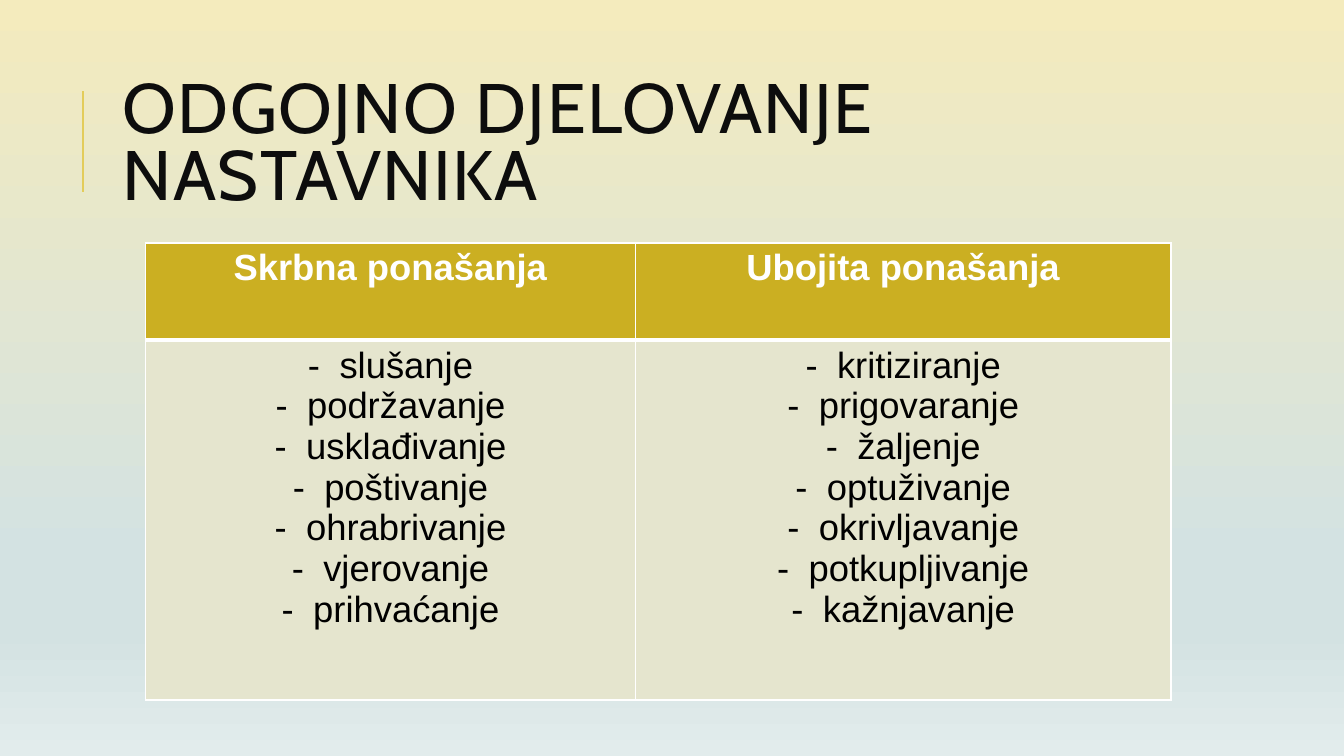
from dataclasses import dataclass

from lxml import etree
from pptx import Presentation
from pptx.dml.color import RGBColor
from pptx.enum.shapes import MSO_CONNECTOR
from pptx.enum.text import MSO_ANCHOR, PP_ALIGN
from pptx.oxml.ns import qn
from pptx.util import Pt

STRAIGHT = MSO_CONNECTOR.STRAIGHT
MIDDLE = MSO_ANCHOR.MIDDLE
LEFT, CENTER = PP_ALIGN.LEFT, PP_ALIGN.CENTER


@dataclass(frozen=True)
class Theme:
    """Colours, fonts and type sizes of the slide."""
    sky: tuple = ((0, "F4EBBD"), (74, "D3E2E2"), (83, "D3E2E2"), (100, "E2ECEC"))
    accent: str = "E3CC5A"
    title: str = "0D0D0D"
    header_fill: str = "CBAF22"
    body_fill: str = "E5E5CE"
    header_text: str = "FFFFFF"
    body_text: str = "000000"
    border: str = "FFFFFF"
    title_font: str = "Cabin"
    table_font: str = "Arial"
    title_size: int = 50
    table_size: int = 26


THEME = Theme()
TITLE = "ODGOJNO DJELOVANJE NASTAVNIKA"
BEHAVIOURS = {
    "Skrbna ponašanja": ["slušanje", "podržavanje", "usklađivanje", "poštivanje",
                         "ohrabrivanje", "vjerovanje", "prihvaćanje"],
    "Ubojita ponašanja": ["kritiziranje", "prigovaranje", "žaljenje", "optuživanje",
                          "okrivljavanje", "potkupljivanje", "kažnjavanje"],
}


def add_xml(parent, tag, **attrs):
    """Append a DrawingML element and return it."""
    return etree.SubElement(parent, qn(tag), {k: str(v) for k, v in attrs.items()})


def add_run(p, text, font, size, color, bold=False):
    """Add one formatted run to a paragraph."""
    r = p.add_run()
    r.text = text
    r.font.name = font
    r.font.size = Pt(size)
    r.font.bold = bold
    r.font.color.rgb = RGBColor.from_string(color)
    return r


def paint_background(s):
    """Fill the slide with the vertical gradient."""
    fill = s.background.fill
    fill.gradient()
    fill.gradient_angle = 270
    stops = s.background._cSld.find(".//" + qn("a:gsLst"))
    for stop in list(stops):
        stops.remove(stop)
    for position, color in THEME.sky:
        stop = add_xml(stops, "a:gs", pos=position * 1000)
        add_xml(stop, "a:srgbClr", val=color)


def build_title(s, x, y, w, h):
    """Place the title and the accent rule to its left."""
    rule_x = Pt(x - 21)
    rule = s.shapes.add_connector(STRAIGHT, rule_x, Pt(y + 91), rule_x, Pt(y + 19))
    rule.line.color.rgb = RGBColor.from_string(THEME.accent)
    rule.line.width = Pt(1.5)
    add_xml(rule._element.spPr, "a:effectLst")

    title = s.shapes.title
    title.left, title.top, title.width, title.height = Pt(x), Pt(y), Pt(w), Pt(h)
    tf = title.text_frame
    tf.word_wrap = True
    tf.vertical_anchor = MIDDLE
    p = tf.paragraphs[0]
    p.alignment = LEFT
    p.line_spacing = 0.8
    r = add_run(p, TITLE, THEME.title_font, THEME.title_size, THEME.title)
    r.font._element.set("spc", "100")


def format_cell(cell, fill, top, bottom):
    """Set the borders and fill of a table cell."""
    tcPr = cell._tc.get_or_add_tcPr()
    for side, width in (("L", 1), ("R", 1), ("T", top), ("B", bottom)):
        ln = add_xml(tcPr, f"a:ln{side}", w=Pt(width))
        add_xml(add_xml(ln, "a:solidFill"), "a:srgbClr", val=THEME.border)
    cell.fill.solid()
    cell.fill.fore_color.rgb = RGBColor.from_string(fill)


def add_dash(p):
    """Give a paragraph a hanging dash bullet."""
    pPr = p._p.get_or_add_pPr()
    pPr.set("marL", str(Pt(22.5)))
    pPr.set("indent", str(-Pt(22.5)))
    add_xml(pPr, "a:buFont", typeface=THEME.table_font)
    add_xml(pPr, "a:buChar", char="-")


def build_table(s, x, y, w, h):
    """Place the two-column table of behaviours."""
    table = s.shapes.add_table(2, 2, Pt(x), Pt(y), Pt(w), Pt(h)).table
    table.columns[0].width, table.columns[1].width = Pt(350), Pt(w - 350)
    table.rows[0].height, table.rows[1].height = Pt(69.5), Pt(h - 69.5)
    for col, (heading, items) in enumerate(BEHAVIOURS.items()):
        header, body = table.cell(0, col), table.cell(1, col)
        format_cell(header, THEME.header_fill, 1, 3)
        format_cell(body, THEME.body_fill, 3, 1)
        p = header.text_frame.paragraphs[0]
        p.alignment = CENTER
        add_run(p, heading, THEME.table_font, THEME.table_size, THEME.header_text, True)
        tf = body.text_frame
        for i, item in enumerate(items):
            p = tf.add_paragraph() if i else tf.paragraphs[0]
            p.alignment = CENTER
            add_dash(p)
            add_run(p, item, THEME.table_font, THEME.table_size, THEME.body_text)


def main():
    """Build and save the presentation."""
    prs = Presentation()
    prs.slide_width, prs.slide_height = Pt(960), Pt(540)
    s = prs.slides.add_slide(prs.slide_layouts[5])
    paint_background(s)
    build_title(s, 80.5, 46, 765.5, 118)
    build_table(s, 104, 173.5, 732.5, 326.5)
    prs.save("out.pptx")


if __name__ == "__main__":
    main()
